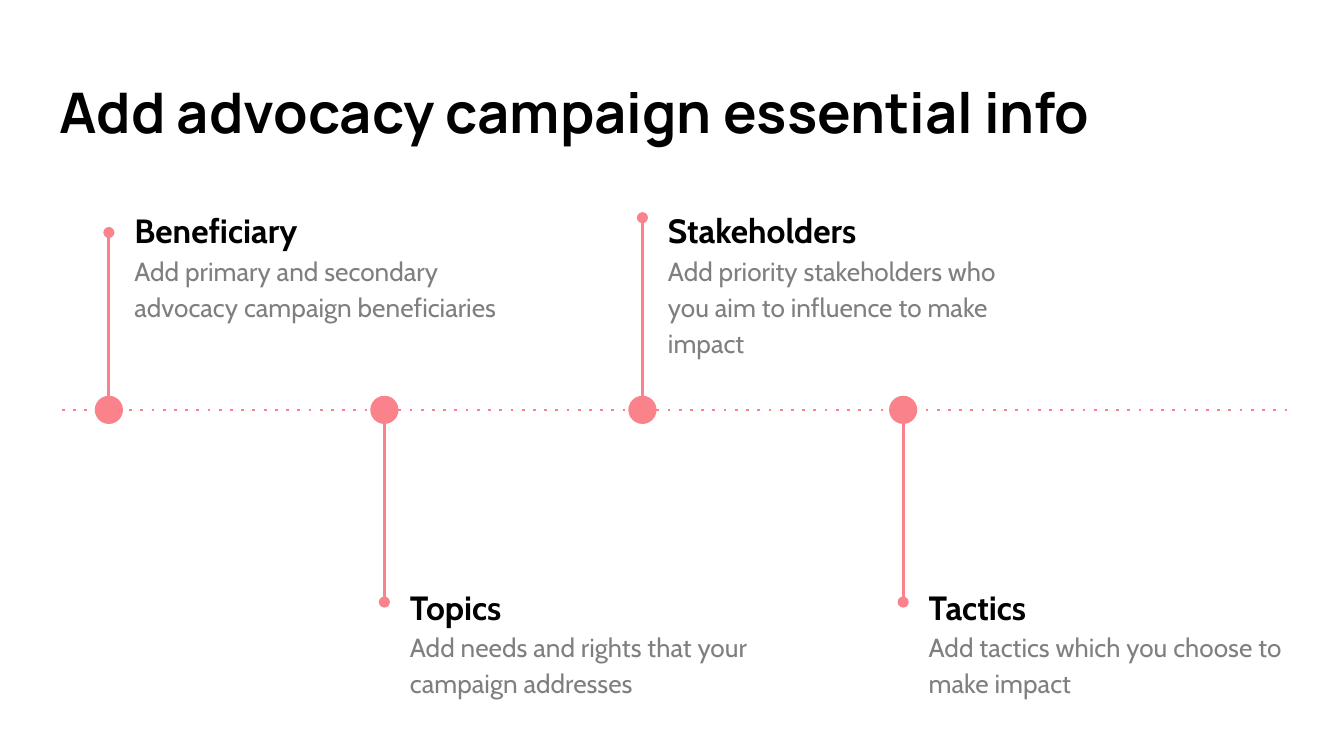
from lxml import etree
from pptx import Presentation
from pptx.dml.color import RGBColor
from pptx.enum.shapes import MSO_CONNECTOR, MSO_SHAPE
from pptx.enum.text import MSO_ANCHOR, MSO_AUTO_SIZE, PP_ALIGN
from pptx.oxml.ns import qn
from pptx.util import Inches, Pt

STRAIGHT = MSO_CONNECTOR.STRAIGHT
OVAL = MSO_SHAPE.OVAL
TOP, MIDDLE = MSO_ANCHOR.TOP, MSO_ANCHOR.MIDDLE
NO_FIT = MSO_AUTO_SIZE.NONE
LEFT = PP_ALIGN.LEFT

CORAL, BLACK, GREY = "FA828B", "000000", "7F7F7F"
COMPARISON_LAYOUT = 4
AXIS_Y = 3.05
DOT_SIZE = 0.21
TEXT_WIDTH, TEXT_HEIGHT = 2.91, 1.06
MARKER_OFFSET = 0.09
UPPER_TEXT, LOWER_TEXT = 1.42, 4.22

MILESTONES = [
    ("Beneficiary", "Add primary and secondary advocacy campaign beneficiaries", 0.9, 1.73, UPPER_TEXT),
    ("Topics", "Add needs and rights that your campaign addresses", 2.95, 4.48, LOWER_TEXT),
    ("Stakeholders", "Add priority stakeholders who you aim to influence to make impact", 4.87, 1.62, UPPER_TEXT),
    ("Tactics", "Add tactics which you choose to make impact", 6.81, 4.48, LOWER_TEXT),
]


def color(value):
    return RGBColor.from_string(value)


def place(shape, left, top, width, height):
    shape.left, shape.top = Inches(left), Inches(top)
    shape.width, shape.height = Inches(width), Inches(height)


def prepare_frame(shape, anchor):
    frame = shape.text_frame
    frame.word_wrap = True
    frame.auto_size = NO_FIT
    frame.vertical_anchor = anchor
    frame.margin_left = frame.margin_right = Inches(0.1)
    frame.margin_top = frame.margin_bottom = Inches(0.1)
    return frame


def write(paragraph, text, font_name, size, text_color, bold):
    paragraph.text = text
    paragraph.alignment = LEFT
    paragraph.space_before = Pt(0)
    font = paragraph.runs[0].font
    font.name, font.size, font.bold = font_name, Pt(size), bold
    font.color.rgb = color(text_color)


def add_line(shapes, start, end, ending, value):
    line = shapes.add_connector(STRAIGHT, *map(Inches, (*start, *end)))
    line.line.color.rgb = color(CORAL)
    line.line.width = Pt(1.5)
    properties = line.line._get_or_add_ln()
    etree.SubElement(properties, qn(ending[0])).set(ending[1], value)
    etree.SubElement(line._element.spPr, qn("a:effectLst"))


def add_title(title, text, left, top, width, height):
    place(title, left, top, width, height)
    frame = prepare_frame(title, MIDDLE)
    write(frame.paragraphs[0], text, "Manrope", 30, BLACK, True)


def add_marker(slide, center_x, stem_end):
    radius = DOT_SIZE / 2
    direction = 1 if stem_end > AXIS_Y else -1
    shapes = slide.shapes.add_group_shape().shapes
    start = (center_x, AXIS_Y + direction * radius)
    add_line(shapes, start, (center_x, stem_end), ("a:tailEnd", "type"), "oval")
    dot = shapes.add_shape(OVAL, *map(Inches, (center_x - radius, AXIS_Y - radius, DOT_SIZE, DOT_SIZE)))
    dot.fill.solid()
    dot.fill.fore_color.rgb = color(CORAL)
    dot.line.fill.background()
    dot.shadow.inherit = False


def add_description(body, heading, detail, left, top):
    place(body, left, top, TEXT_WIDTH, TEXT_HEIGHT)
    frame = prepare_frame(body, TOP)
    frame.text = heading + "\n" + detail
    styles = [(heading, 18, BLACK, True), (detail, 14, GREY, False)]
    for paragraph, (text, size, text_color, bold) in zip(frame.paragraphs, styles):
        properties = paragraph._p.get_or_add_pPr()
        properties.set("marL", "0")
        properties.set("indent", "0")
        etree.SubElement(properties, qn("a:buNone"))
        write(paragraph, text, "Cabin", size, text_color, bold)
        paragraph.line_spacing = 1.15
        paragraph.space_after = Pt(0)


def build_timeline(slide, left, right):
    add_line(slide.shapes, (left, AXIS_Y), (right, AXIS_Y), ("a:prstDash", "val"), "dot")
    bodies = list(slide.placeholders)[1:]
    for body, (heading, detail, text_left, stem_end, text_top) in zip(bodies, MILESTONES):
        add_marker(slide, text_left - MARKER_OFFSET, stem_end)
        add_description(body, heading, detail, text_left, text_top)


def main():
    presentation = Presentation()
    presentation.slide_width = Inches(10)
    presentation.slide_height = presentation.slide_width * 9 // 16
    slide = presentation.slides.add_slide(presentation.slide_layouts[COMPARISON_LAYOUT])
    add_title(slide.shapes.title, "Add advocacy campaign essential info", 0.34, 0.49, 9.32, 0.68)
    build_timeline(slide, 0.46, 9.58)
    presentation.save("out.pptx")


if __name__ == "__main__":
    main()
